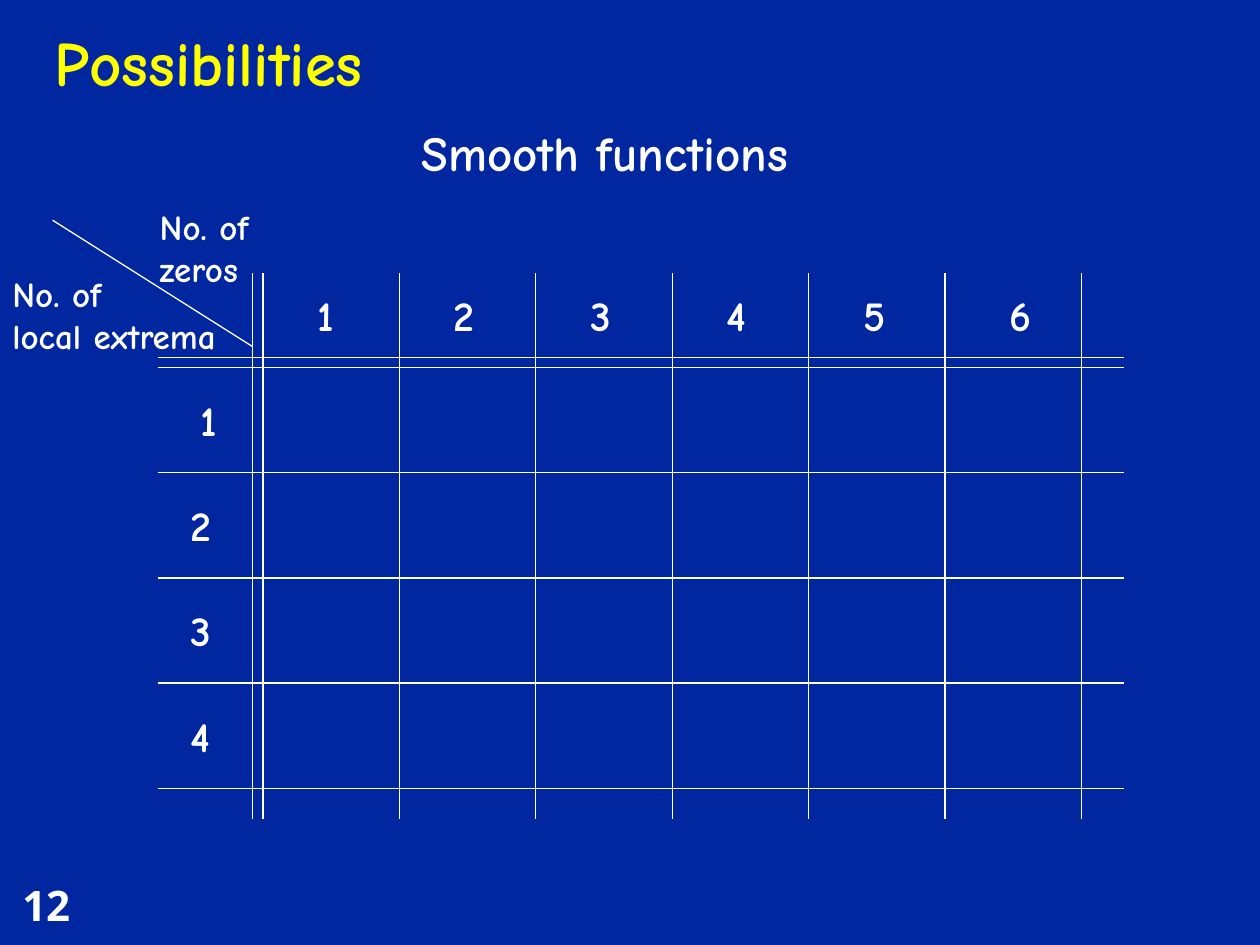
from lxml.etree import SubElement
from pptx import Presentation
from pptx.dml.color import RGBColor
from pptx.enum.shapes import MSO_CONNECTOR as Conn
from pptx.enum.text import MSO_ANCHOR as Anchor, MSO_AUTO_SIZE as Auto, PP_ALIGN as Align
from pptx.oxml.ns import qn
from pptx.util import Cm, Pt

NAVY = RGBColor(0x00, 0x27, 0x9F)
YELLOW = RGBColor(0xFF, 0xFF, 0x00)
WHITE = RGBColor(0xFF, 0xFF, 0xFF)
FONT = "Comic Neue"
NUMBER_FONT = "Open Sans"


def add_run(p, text, size, color=WHITE, font=FONT):
    r = p.add_run()
    r.text = text
    r.font.size = Pt(size)
    r.font.name = font
    r.font.bold = True
    r.font.color.rgb = color


def add_text(s, x, y, w, h, lines, size, font=FONT):
    sp = s.shapes.add_textbox(Cm(x), Cm(y), Cm(w), Cm(h))
    tf = sp.text_frame
    tf.word_wrap = True
    p = tf.paragraphs[0]
    for i, line in enumerate(lines):
        if i:
            p.add_line_break()
        add_run(p, line, size, font=font)


def add_line(s, x1, y1, x2, y2):
    c = s.shapes.add_connector(Conn.STRAIGHT, Cm(x1), Cm(y1), Cm(x2), Cm(y2))
    c.line.color.rgb = WHITE
    c.line.width = Pt(0.75)
    SubElement(c._element.spPr, qn("a:effectLst"))


def add_title(s, x, y, w, h, text):
    sp = s.shapes.title
    sp.left, sp.top, sp.width, sp.height = Cm(x), Cm(y), Cm(w), Cm(h)
    tf = sp.text_frame
    tf.auto_size = Auto.NONE
    tf.vertical_anchor = Anchor.BOTTOM
    p = tf.paragraphs[0]
    p.alignment = Align.LEFT
    add_run(p, text, 36, YELLOW)


def add_corner(s, x, y):
    add_text(s, x + 2.97, y, 2.54, 1.96, ["No. of zeros"], 20)
    add_text(s, x, y + 1.34, 5.72, 1.96, ["No. of ", "local extrema"], 20)
    add_line(s, x + 5.08, y + 2.96, x + 1.06, y + 0.42)


def add_grid(s, x, y, w, h, columns, rows):
    col_w, row_h, gap = 2.75, 2.12, 0.21
    head_w, head_h = 1.91, 1.7
    body_x, body_y = x + head_w + gap, y + head_h + gap

    for line_x in [x + head_w] + [body_x + i * col_w for i in range(len(columns) + 1)]:
        add_line(s, line_x, y, line_x, y + h)
    for line_y in [y + head_h] + [body_y + i * row_h for i in range(len(rows) + 1)]:
        add_line(s, x, line_y, x + w, line_y)

    for i, (label, shift) in enumerate(columns):
        add_text(s, body_x + 0.85 + i * col_w + shift, y + 0.22, 1, 1.29, [label], 24)
    for i, (label, shift) in enumerate(rows):
        add_text(s, x + 0.41 + shift, body_y + 0.42 + i * row_h, 1, 1.29, [label], 24)


def main():
    prs = Presentation()
    prs.slide_width, prs.slide_height = Cm(25.4), Cm(19.05)
    s = prs.slides.add_slide(prs.slide_layouts[5])
    s.background.fill.solid()
    s.background.fill.fore_color.rgb = NAVY

    add_text(s, 0.2, 17.6, 1.9, 1.27, ["12"], 24, NUMBER_FONT)
    add_title(s, 0.84, 0.43, 21.6, 1.7, "Possibilities")
    add_text(s, 8.25, 2.34, 9.96, 1.45, ["Smooth functions"], 28)
    columns = [("1", 0), ("2", 0), ("3", 0), ("4", 0), ("5", 0), ("6", 0.2)]
    rows = [("1", 0.2), ("2", 0), ("3", 0), ("4", 0)]
    add_grid(s, 3.18, 5.5, 19.47, 11.01, columns, rows)
    add_corner(s, 0, 4.02)
    prs.save("out.pptx")


if __name__ == "__main__":
    main()
